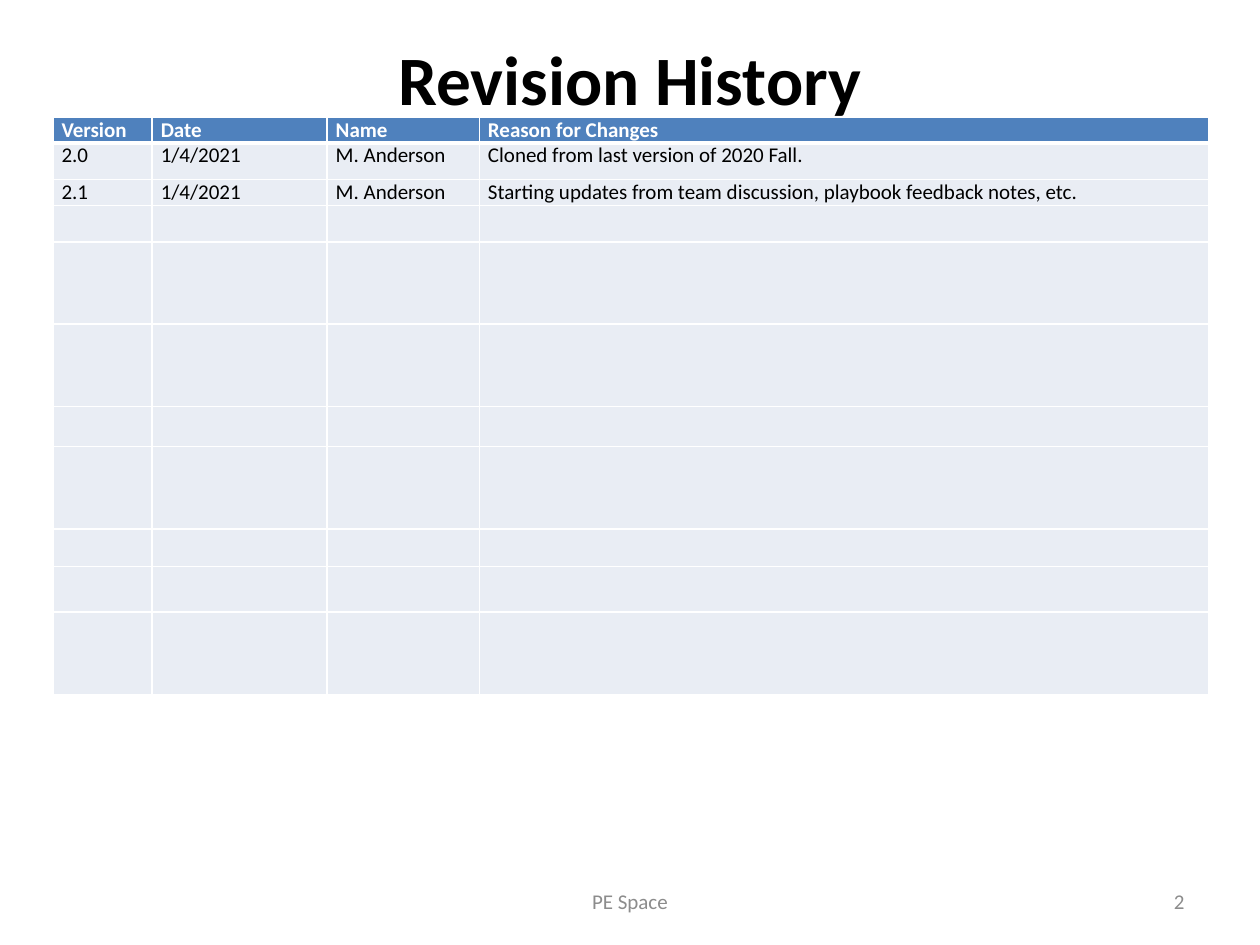
"""Build the revision history slide with its version table and footer."""
from lxml import etree
from pptx import Presentation
from pptx.dml.color import RGBColor
from pptx.enum.text import MSO_ANCHOR, PP_ALIGN
from pptx.oxml.ns import qn
from pptx.util import Pt

MIDDLE = MSO_ANCHOR.MIDDLE
CENTER, RIGHT = PP_ALIGN.CENTER, PP_ALIGN.RIGHT
BLACK = RGBColor(0x00, 0x00, 0x00)
WHITE = RGBColor(0xFF, 0xFF, 0xFF)
HEADER_BLUE = RGBColor(0x4F, 0x81, 0xBD)
ROW_GRAY = RGBColor(0xE9, 0xED, 0xF4)
FOOTER_GRAY = RGBColor(0x8C, 0x8C, 0x8C)
FONT = "Calibri"
TITLE_ONLY = 5

COLUMN_WIDTHS = [56.7, 100, 87, 416.6]
ROW_HEIGHTS = [11, 21, 11, 21, 47, 47, 23, 47, 21.5, 26, 47]
REVISIONS = [
    ["Version", "Date", "Name", "Reason for Changes"],
    ["2.0", "1/4/2021", "M. Anderson", "Cloned from last version of 2020 Fall."],
    ["2.1", "1/4/2021", "M. Anderson",
     "Starting updates from team discussion, playbook feedback notes, etc."],
]
FOOTERS = [("PE Space", 246, 228, CENTER), ("2", 516, 168, RIGHT)]


def write(para, text, size, color, bold=False):
    para.text = text
    for span in para.runs:
        span.font.name = FONT
        span.font.size = Pt(size)
        span.font.bold = bold
        span.font.color.rgb = color


def add_borders(cell, bottom_width):
    properties = cell._tc.get_or_add_tcPr()
    for side, width in (("L", 1), ("R", 1), ("T", 1), ("B", bottom_width)):
        line = etree.SubElement(properties, qn(f"a:ln{side}"), w=str(Pt(width)))
        fill = etree.SubElement(line, qn("a:solidFill"))
        etree.SubElement(fill, qn("a:srgbClr"), val=str(WHITE))


deck = Presentation()
deck.slide_width, deck.slide_height = Pt(720), Pt(540)
page = deck.slides.add_slide(deck.slide_layouts[TITLE_ONLY])

title = page.shapes.title
title.left, title.top, title.width, title.height = Pt(36), Pt(21.6), Pt(648), Pt(90)
title.text_frame.vertical_anchor = MIDDLE
title.text_frame.margin_bottom = Pt(47.5)
write(title.text_frame.paragraphs[0], "Revision History", 39.6, BLACK, True)
title.text_frame.paragraphs[0].alignment = CENTER

table = page.shapes.add_table(
    len(ROW_HEIGHTS), len(COLUMN_WIDTHS), Pt(30.2), Pt(67),
    Pt(sum(COLUMN_WIDTHS)), Pt(sum(ROW_HEIGHTS))).table
table.horz_banding = False
for column, width in zip(table.columns, COLUMN_WIDTHS):
    column.width = Pt(width)

for row_index, height in enumerate(ROW_HEIGHTS):
    table.rows[row_index].height = Pt(height)
    is_header = row_index == 0
    for column_index in range(len(COLUMN_WIDTHS)):
        cell = table.cell(row_index, column_index)
        cell.margin_left = cell.margin_right = Pt(5)
        cell.margin_top = cell.margin_bottom = Pt(0)
        add_borders(cell, 3 if is_header else 1)
        cell.fill.solid()
        cell.fill.fore_color.rgb = HEADER_BLUE if is_header else ROW_GRAY
        para = cell.text_frame.paragraphs[0]
        if row_index < len(REVISIONS):
            write(para, REVISIONS[row_index][column_index], 12,
                  WHITE if is_header else BLACK, is_header)
        else:
            etree.SubElement(para._p, qn("a:endParaRPr"), sz="1200")

for text, left, width, alignment in FOOTERS:
    box = page.shapes.add_textbox(Pt(left), Pt(500.5), Pt(width), Pt(28.75))
    box.text_frame.word_wrap = True
    box.text_frame.vertical_anchor = MIDDLE
    write(box.text_frame.paragraphs[0], text, 12, FOOTER_GRAY)
    box.text_frame.paragraphs[0].alignment = alignment

deck.save("out.pptx")
